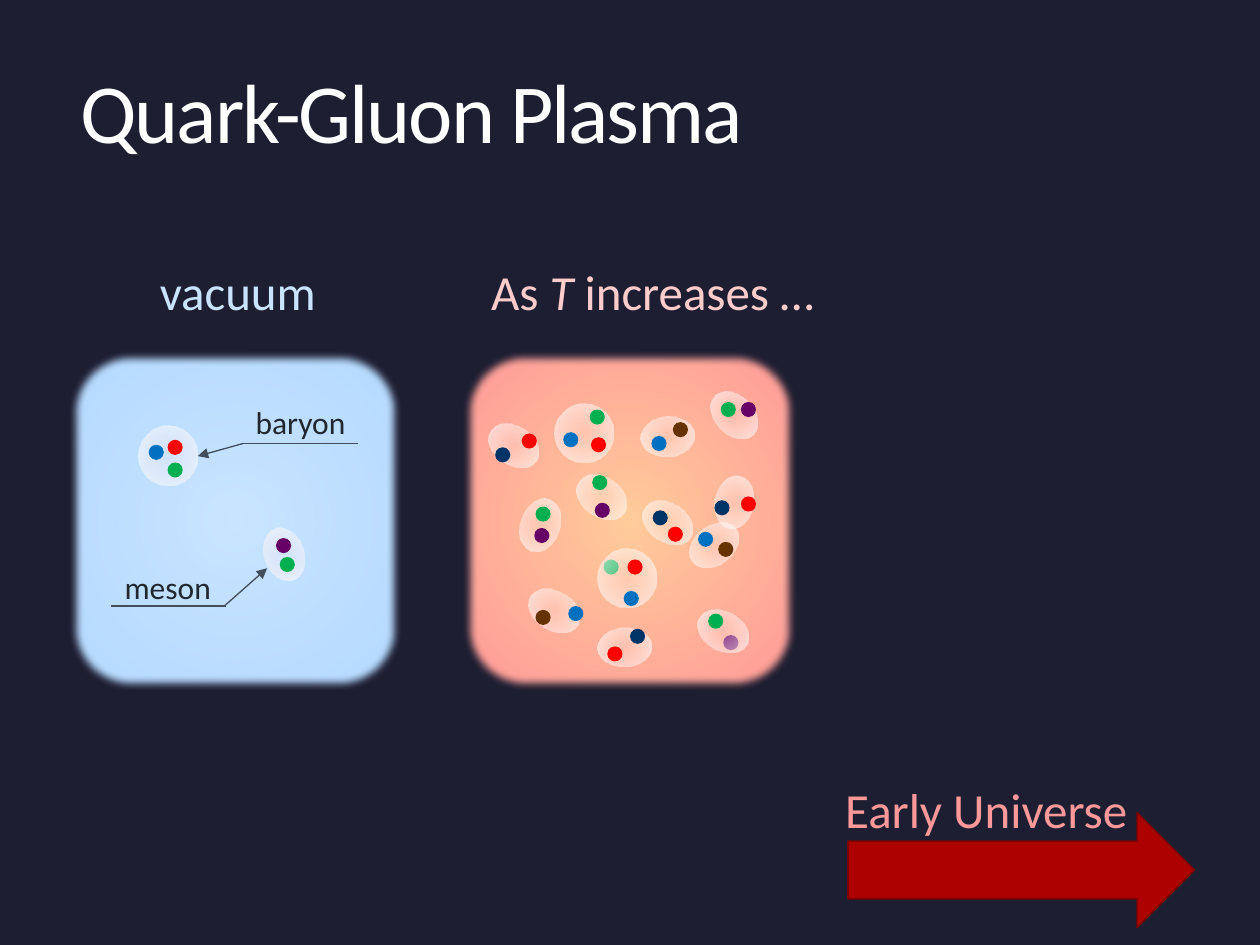
from typing import NamedTuple

from pptx import Presentation
from pptx.dml.color import RGBColor
from pptx.enum.shapes import MSO_CONNECTOR, MSO_SHAPE as Shape
from pptx.enum.text import MSO_ANCHOR, MSO_AUTO_SIZE
from pptx.oxml import parse_xml
from pptx.oxml.ns import nsdecls, qn
from pptx.util import Inches, Pt

FONT = "Calibri"
NIGHT = RGBColor(0x1E, 0x1E, 0x32)
WHITE = RGBColor(0xFF, 0xFF, 0xFF)
BLUSH = RGBColor(0xFF, 0xEE, 0xEE)
ICE = RGBColor(0xC9, 0xE4, 0xFF)
SKY = RGBColor(0xB3, 0xD9, 0xFF)
PEACH = RGBColor(0xFF, 0xCC, 0x99)
SALMON = RGBColor(0xFF, 0x99, 0x99)
ROSE = RGBColor(0xFF, 0xCC, 0xCC)
CRIMSON = RGBColor(0xAD, 0x01, 0x01)
MAROON = RGBColor(0x80, 0x01, 0x01)
INK = RGBColor(0x21, 0x27, 0x2E)
SLATE = RGBColor(0x42, 0x4E, 0x5B)
RED = RGBColor(0xFF, 0x00, 0x00)
GREEN = RGBColor(0x00, 0xB0, 0x50)
BLUE = RGBColor(0x00, 0x70, 0xC0)
PURPLE = RGBColor(0x66, 0x00, 0x66)
NAVY = RGBColor(0x00, 0x33, 0x66)
BROWN = RGBColor(0x66, 0x33, 0x00)

QUARK = 0.12
BARYON = (0.47, 0.47)
MESON = (0.31, 0.43)
PANEL = (2.65, 2.7)


class Stop(NamedTuple):
    position: int
    color: RGBColor
    opacity: int = 100


class Hadron(NamedTuple):
    left: float
    top: float
    rotation: float = 0
    size: tuple[float, float] = MESON


class Label(NamedTuple):
    text: str
    left: float
    top: float
    width: float
    height: float
    points: int
    color: RGBColor


class Leader(NamedTuple):
    start: tuple[float, float]
    end: tuple[float, float]
    arrow: bool = False


HAZE = (Stop(0, BLUSH, 25), Stop(100, WHITE, 70))

HADRONS = [
    Hadron(1.1, 3.38, size=BARYON), Hadron(2.1, 4.18, 341.4),
    Hadron(4.4, 3.2, size=BARYON), Hadron(4.13, 3.95, 20.5),
    Hadron(4.74, 4.35, size=BARYON), Hadron(5.14, 3.25, 84.8),
    Hadron(5.14, 3.93, 304.3), Hadron(4.24, 4.63, 122.2),
    Hadron(5.67, 3.77, 10.2), Hadron(5.58, 4.79, 298.4),
    Hadron(5.51, 4.11, 50.7), Hadron(3.92, 3.32, 304.3),
    Hadron(4.62, 3.73, 304.3), Hadron(5.67, 3.08, 315.7),
    Hadron(4.8, 4.92, 86.5),
]

VEILED_QUARKS = {GREEN: [(4.79, 4.44)], PURPLE: [(5.74, 5.04)]}
QUARKS = {
    RED: [(1.33, 3.49), (4.69, 3.47), (4.82, 5.13), (4.98, 4.44),
          (4.14, 3.44), (5.3, 4.18), (5.88, 3.94)],
    GREEN: [(1.33, 3.67), (2.22, 4.42), (5.62, 4.87), (4.68, 3.25),
            (4.25, 4.02), (4.7, 3.77), (5.72, 3.19)],
    BLUE: [(1.18, 3.53), (4.47, 3.43), (4.95, 4.69), (4.51, 4.81),
           (5.17, 3.46), (5.54, 4.22)],
    PURPLE: [(2.19, 4.27), (4.24, 4.19), (4.72, 3.99), (5.88, 3.19)],
    NAVY: [(5.18, 4.05), (3.93, 3.55), (5.67, 3.97), (5, 4.99)],
    BROWN: [(4.25, 4.84), (5.7, 4.3), (5.34, 3.35)],
}

LABELS = [
    Label("vacuum", 1.17, 2.03, 1.44, 0.57, 28, ICE),
    Label("Early Universe", 6.61, 6.14, 2.44, 0.57, 28, SALMON),
    Label("baryon", 1.93, 3.15, 0.91, 0.4, 18, INK),
    Label("meson", 0.89, 4.46, 0.89, 0.4, 18, INK),
]
HEATING = Label("", 3.8, 2.03, 2.85, 0.57, 28, ROSE)
TITLE = Label("Quark-Gluon Plasma", 0.54, 0.02, 8.84, 1.81, 48, WHITE)

LEADERS = [
    Leader((2.84, 3.52), (1.93, 3.52)),
    Leader((1.93, 3.52), (1.57, 3.62), arrow=True),
    Leader((1.79, 4.81), (0.88, 4.81)),
    Leader((1.78, 4.81), (2.12, 4.51), arrow=True),
]


def add_plain_shape(slide, kind, left, top, width, height):
    """Add a preset shape without shadow, fill or outline."""
    shape = slide.shapes.add_shape(
        kind, Inches(left), Inches(top), Inches(width), Inches(height))
    shape.shadow.inherit = False
    shape.fill.background()
    shape.line.fill.background()
    return shape


def fill_radial(shape, stops: tuple[Stop, ...]) -> None:
    """Replace the empty fill by a gradient running out from the centre."""
    stop_xml = "".join(
        f'<a:gs pos="{stop.position * 1000}"><a:srgbClr val="{stop.color}">'
        f'<a:alpha val="{stop.opacity * 1000}"/></a:srgbClr></a:gs>'
        for stop in stops)
    gradient = parse_xml(
        f'<a:gradFill {nsdecls("a")} rotWithShape="1"><a:gsLst>{stop_xml}</a:gsLst>'
        '<a:path path="circle"><a:fillToRect l="50000" t="50000" r="50000" b="50000"/>'
        '</a:path></a:gradFill>')
    properties = shape._element.spPr
    properties.replace(properties.find(qn("a:noFill")), gradient)


def add_panel(slide, left: float, inner: RGBColor, outer: RGBColor) -> None:
    panel = add_plain_shape(slide, Shape.ROUNDED_RECTANGLE, left, 2.78, *PANEL)
    fill_radial(panel, (Stop(0, inner), Stop(98, outer)))
    effects = panel._element.spPr.find(qn("a:effectLst"))
    effects.append(parse_xml(f'<a:softEdge {nsdecls("a")} rad="{Pt(5)}"/>'))


def add_hadron(slide, hadron: Hadron) -> None:
    haze = add_plain_shape(slide, Shape.OVAL, hadron.left, hadron.top, *hadron.size)
    haze.rotation = hadron.rotation
    fill_radial(haze, HAZE)


def add_quarks(slide, quarks: dict) -> None:
    for color, places in quarks.items():
        for left, top in places:
            quark = add_plain_shape(slide, Shape.OVAL, left, top, QUARK, QUARK)
            quark.fill.solid()
            quark.fill.fore_color.rgb = color


def style_run(run, label: Label) -> None:
    run.font.name = FONT
    run.font.size = Pt(label.points)
    run.font.color.rgb = label.color


def add_label(slide, label: Label, runs: tuple[str, ...] = ()):
    """Add unwrapped text, split into several runs if these are given."""
    box = slide.shapes.add_textbox(Inches(label.left), Inches(label.top),
                                   Inches(label.width), Inches(label.height))
    box.text_frame.word_wrap = False
    box.text_frame.auto_size = MSO_AUTO_SIZE.SHAPE_TO_FIT_TEXT
    paragraph = box.text_frame.paragraphs[0]
    for text in runs or (label.text,):
        run = paragraph.add_run()
        run.text = text
        style_run(run, label)
    return box.text_frame


def add_title(slide) -> None:
    frame = add_label(slide, TITLE)
    frame.auto_size = MSO_AUTO_SIZE.NONE
    frame.word_wrap = True
    frame.vertical_anchor = MSO_ANCHOR.MIDDLE
    paragraph = frame.paragraphs[0]
    paragraph.line_spacing = 0.9
    paragraph.runs[0].font._element.set("spc", "-120")


def add_leader(slide, leader: Leader) -> None:
    ends = [Inches(value) for value in leader.start + leader.end]
    connector = slide.shapes.add_connector(MSO_CONNECTOR.STRAIGHT, *ends)
    connector.line.color.rgb = SLATE
    connector.line.width = Pt(0.75)
    if leader.arrow:
        connector.line._get_or_add_ln().append(
            parse_xml(f'<a:tailEnd {nsdecls("a")} type="triangle"/>'))
    connector._element.spPr.append(parse_xml(f'<a:effectLst {nsdecls("a")}/>'))


def main() -> None:
    presentation = Presentation()
    presentation.slide_width, presentation.slide_height = Inches(10), Inches(7.5)
    slide = presentation.slides.add_slide(presentation.slide_layouts[6])
    slide.background.fill.solid()
    slide.background.fill.fore_color.rgb = NIGHT

    add_title(slide)
    add_panel(slide, 0.54, ICE, SKY)
    add_panel(slide, 3.67, PEACH, SALMON)
    add_quarks(slide, VEILED_QUARKS)
    for hadron in HADRONS:
        add_hadron(slide, hadron)
    add_quarks(slide, QUARKS)

    arrow = add_plain_shape(slide, Shape.RIGHT_ARROW, 6.73, 6.45, 2.75, 0.91)
    arrow.fill.solid()
    arrow.fill.fore_color.rgb = CRIMSON
    arrow.line.color.rgb = MAROON
    arrow.line.width = Pt(1)

    for label in LABELS:
        add_label(slide, label)
    heating = add_label(slide, HEATING, ("As", " T ", "increases …"))
    heating.paragraphs[0].runs[1].font.italic = True
    for leader in LEADERS:
        add_leader(slide, leader)
    presentation.save("out.pptx")


if __name__ == "__main__":
    main()
